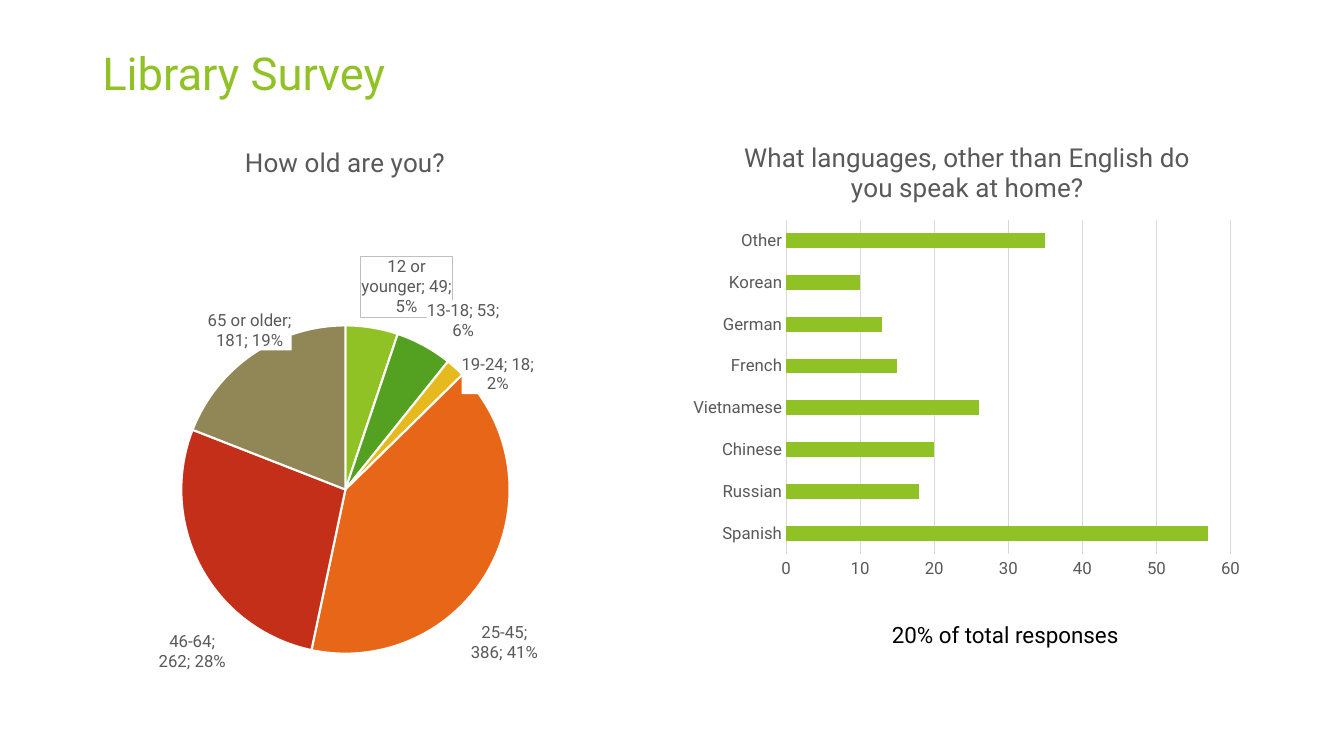
from lxml import etree
from pptx import Presentation
from pptx.chart.data import CategoryChartData
from pptx.dml.color import RGBColor
from pptx.enum.chart import XL_CHART_TYPE as ChartType
from pptx.enum.chart import XL_LABEL_POSITION as LabelPosition
from pptx.enum.chart import XL_TICK_MARK as TickMark
from pptx.enum.text import MSO_ANCHOR as Anchor
from pptx.oxml import parse_xml
from pptx.oxml.ns import nsdecls, qn
from pptx.util import Pt

FONT = "Roboto"
GREEN = RGBColor(0x90, 0xC2, 0x26)
BLACK = RGBColor(0x00, 0x00, 0x00)
WHITE = RGBColor(0xFF, 0xFF, 0xFF)
TEXT_GREY = RGBColor(0x59, 0x59, 0x59)
LINE_GREY = RGBColor(0xD9, 0xD9, 0xD9)
BORDER_GREY = RGBColor(0xBF, 0xBF, 0xBF)
AGE_COLOURS = [
    GREEN,
    RGBColor(0x54, 0xA0, 0x21),
    RGBColor(0xE6, 0xB9, 0x1E),
    RGBColor(0xE7, 0x66, 0x18),
    RGBColor(0xC4, 0x2F, 0x1A),
    RGBColor(0x91, 0x86, 0x55),
]

AGES = {"12 or younger": 49, "13-18": 53, "19-24": 18,
        "25-45": 386, "46-64": 262, "65 or older": 181}
LANGUAGES = {"Spanish": 57, "Russian": 18, "Chinese": 20, "Vietnamese": 26,
             "French": 15, "German": 13, "Korean": 10, "Other": 35}
# Shift of a slice's label in points, by slice number
LABEL_SHIFTS = {0: (-8.5, -3), 2: (1.5, 22), 3: (-17, 36.5), 4: (21.5, 44), 5: (30, 1)}


def set_format(target, **values):
    for name, value in values.items():
        setattr(target, name, value)


def style_font(font, size, colour):
    set_format(font, name=FONT, size=Pt(size), bold=False)
    font.color.rgb = colour


def add_text(slide, box, text, size, colour):
    frame = slide.shapes.add_textbox(*map(Pt, box)).text_frame
    set_format(frame, word_wrap=True, vertical_anchor=Anchor.MIDDLE)
    run = frame.paragraphs[0].add_run()
    run.text = text
    style_font(run.font, size, colour)


def manual_layout(**parts):
    layout = parse_xml(f"<c:layout {nsdecls('c')}/>")
    manual = etree.SubElement(layout, qn("c:manualLayout"))
    for tag, value in parts.items():
        etree.SubElement(manual, qn(f"c:{tag}")).set("val", str(value))
    return layout


def place_plot(chart, box, inset):
    """Place the inner plot area; inset is left, top, width, height in the box."""
    plot_area = chart._chartSpace.chart.plotArea
    for old in plot_area.findall(qn("c:layout")):
        plot_area.remove(old)
    left, top, width, height = inset
    plot_area.insert(0, manual_layout(
        layoutTarget="inner", xMode="edge", yMode="edge",
        x=left / box[2], y=top / box[3], w=width / box[2], h=height / box[3]))


def add_survey_chart(slide, box, kind, question, answers):
    data = CategoryChartData()
    data.categories = list(answers)
    data.add_series("Series 1", list(answers.values()))
    chart = slide.shapes.add_chart(kind, *map(Pt, box), data).chart
    style_font(chart.font, 10, BLACK)
    chart.has_legend = False
    title = chart.chart_title
    title.include_in_layout = False
    title.text_frame.text = question
    for line in title.text_frame.paragraphs:
        style_font(line.runs[0].font, 18.6, TEXT_GREY)
    return chart


def label_box(border=None):
    line = "<a:noFill/>"
    if border:
        line = f'<a:solidFill><a:srgbClr val="{border}"/></a:solidFill>'
    return (f'<c:spPr {nsdecls("c", "a")}><a:solidFill><a:srgbClr val="{WHITE}"/>'
            f'</a:solidFill><a:ln w="9525">{line}</a:ln></c:spPr>')


def shifted_label(index, shift, box, text_style):
    label = parse_xml(
        f'<c:dLbl {nsdecls("c", "a")}><c:idx val="{index}"/>'
        f'{label_box(None if index else BORDER_GREY)}'
        f'{etree.tostring(text_style, encoding="unicode")}'
        '<c:dLblPos val="outEnd"/><c:showLegendKey val="0"/><c:showVal val="1"/>'
        '<c:showCatName val="1"/><c:showSerName val="0"/><c:showPercent val="1"/>'
        '<c:showBubbleSize val="0"/><c:separator>; </c:separator></c:dLbl>')
    label.insert(1, manual_layout(x=shift[0] / box[2], y=shift[1] / box[3]))
    return label


def add_age_pie(slide, box):
    chart = add_survey_chart(slide, box, ChartType.PIE, "How old are you?", AGES)
    place_plot(chart, box, (55.5, 144.5, 234.5, 234.5))
    plot = chart.plots[0]
    plot.vary_by_categories = True

    # Slices
    series = plot.series[0]
    for index, colour in enumerate(AGE_COLOURS):
        slice_format = series.points[index].format
        slice_format.fill.solid()
        slice_format.fill.fore_color.rgb = colour
        slice_format.line.color.rgb = WHITE
        slice_format.line.width = Pt(1.5)

    # Labels on white, the youngest group framed
    labels = series.data_labels
    set_format(labels, show_value=True, show_percentage=True, show_category_name=True,
               show_legend_key=False, position=LabelPosition.OUTSIDE_END)
    style_font(labels.font, 12, TEXT_GREY)
    element = labels._element
    text_style = element.find(qn("c:txPr"))
    text_style.addprevious(parse_xml(label_box()))
    for place, (index, shift) in enumerate(LABEL_SHIFTS.items()):
        element.insert(place, shifted_label(index, shift, box, text_style))
    last_flag = element.find(qn("c:showBubbleSize"))
    if last_flag is None:
        last_flag = element.find(qn("c:showPercent"))
    last_flag.addnext(parse_xml(f'<c:separator {nsdecls("c")}>; </c:separator>'))
    for leader_lines in element.findall(qn("c:showLeaderLines")):
        leader_lines.set("val", "0")


def add_language_bars(slide, box):
    chart = add_survey_chart(
        slide, box, ChartType.BAR_CLUSTERED,
        "What languages, other than English do\nyou speak at home?", LANGUAGES)
    place_plot(chart, box, (74, 69, 317.5, 239))
    plot = chart.plots[0]
    set_format(plot, vary_by_categories=False, gap_width=182)
    fill = plot.series[0].format.fill
    fill.solid()
    fill.fore_color.rgb = GREEN

    # Axes and grid
    languages, responses = chart.category_axis, chart.value_axis
    for axis in (languages, responses):
        set_format(axis, major_tick_mark=TickMark.NONE, minor_tick_mark=TickMark.NONE)
        style_font(axis.tick_labels.font, 12, TEXT_GREY)
    set_format(responses, minimum_scale=0, maximum_scale=60, major_unit=10,
               has_major_gridlines=True)
    responses.format.line.fill.background()
    for line in (languages.format.line, responses.major_gridlines.format.line):
        line.color.rgb = LINE_GREY
        line.width = Pt(0.75)


def build_survey_slide(deck):
    slide = deck.slides.add_slide(deck.slide_layouts[6])
    add_text(slide, (66, 27, 828, 49), "Library Survey", 32.4, GREEN)
    add_age_pie(slide, (74, 88, 345, 434))
    add_language_bars(slide, (487.5, 88, 407, 332.5))
    add_text(slide, (630, 439.5, 324, 27), "20% of total responses", 16, BLACK)


def main():
    deck = Presentation()
    set_format(deck, slide_width=Pt(960), slide_height=Pt(540))
    build_survey_slide(deck)
    deck.save("out.pptx")


if __name__ == "__main__":
    main()
